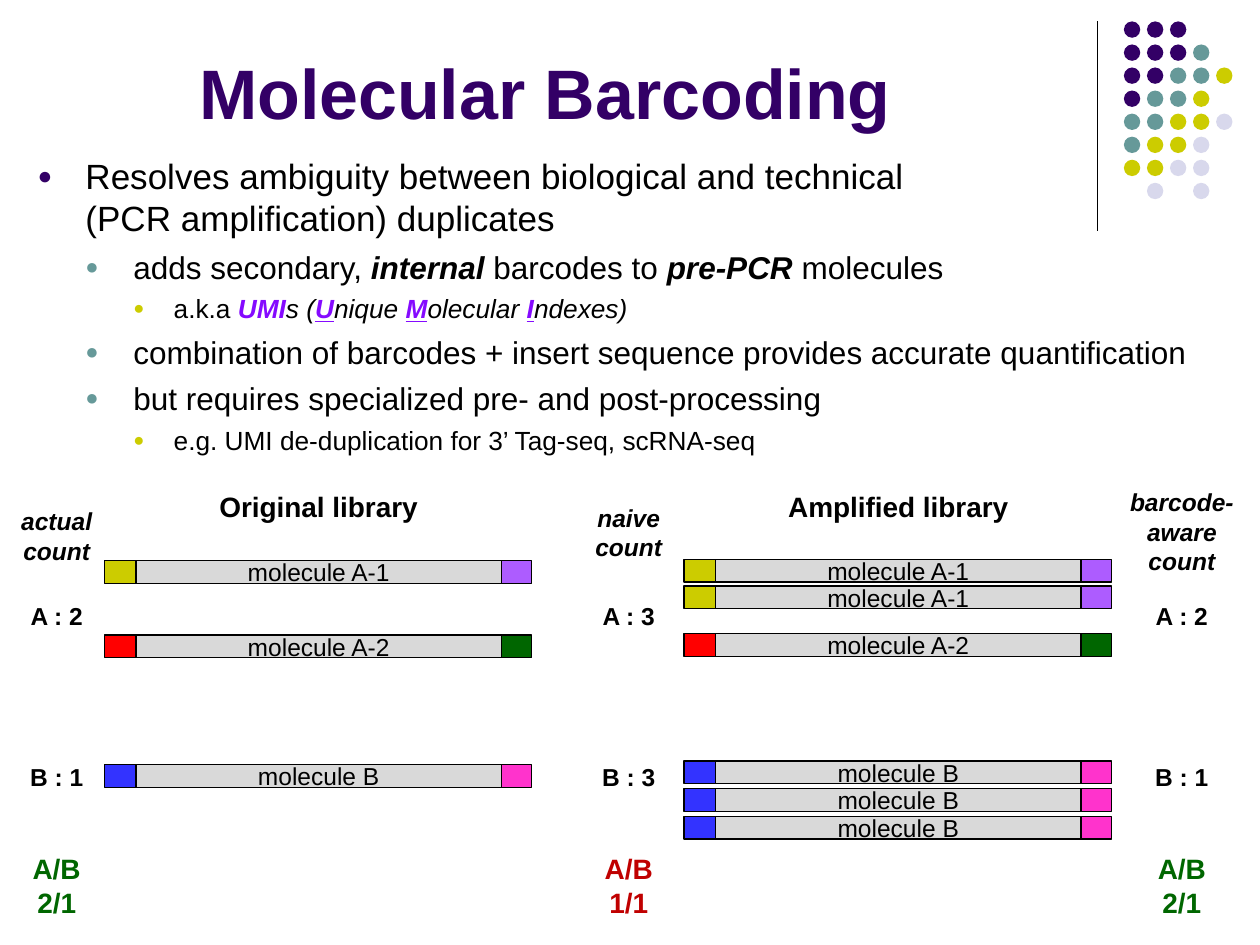
from lxml import etree
from pptx import Presentation
from pptx.dml.color import RGBColor
from pptx.enum.shapes import MSO_CONNECTOR, MSO_SHAPE
from pptx.enum.text import MSO_ANCHOR, PP_ALIGN
from pptx.oxml.ns import qn
from pptx.util import Inches, Pt

RECT, OVAL = MSO_SHAPE.RECTANGLE, MSO_SHAPE.OVAL
STRAIGHT = MSO_CONNECTOR.STRAIGHT
CENTER = PP_ALIGN.CENTER
TOP, MIDDLE, BOTTOM = MSO_ANCHOR.TOP, MSO_ANCHOR.MIDDLE, MSO_ANCHOR.BOTTOM

FONT = "Arial"
BLACK, GREY, PURPLE = "000000", "D9D9D9", "330066"
TEAL, OLIVE, LILAC = "669999", "CCCC00", "D8D8EC"
VIOLET, GREEN, RED = "850AFF", "006600", "C00000"

DOT_COLORS = {"P": PURPLE, "T": TEAL, "O": OLIVE, "L": LILAC}
DOT_ROWS = ["PPP", "PPPT", "PPTTO", "PTTO", "TTOOL", "TOOL", "OOLL", " L L"]

# Left indent, hanging indent, size, space before, bullet colour
LEVELS = [(0.38, 0.38, 20, 5, PURPLE),
          (0.76, 0.38, 18, 5, TEAL),
          (1.08, 0.32, 15, 4, OLIVE)]

# Level, then runs of (text, style): b bold, i italic, u underlined, v violet
BULLETS = [
    (0, [("Resolves ambiguity between biological and technical\n"
          "(PCR amplification) duplicates", "")]),
    (1, [("adds secondary, ", ""), ("internal", "bi"), (" barcodes to ", ""),
         ("pre-PCR", "bi"), (" molecules", "")]),
    (2, [("a.k.a ", ""), ("UMI", "biv"), ("s (", "i"), ("U", "biuv"),
         ("nique ", "i"), ("M", "biuv"), ("olecular ", "i"), ("I", "biuv"),
         ("ndexes)", "i")]),
    (1, [("combination of barcodes + insert sequence provides accurate "
          "quantification", "")]),
    (1, [("but requires specialized pre- and post-processing", "")]),
    (2, [("e.g. UMI de-duplication for 3’ Tag-seq, scRNA-seq", "")]),
]

# Left and right barcode colours
BARCODES = {"molecule A-1": (OLIVE, "AD5CFF"),
            "molecule A-2": ("FF0000", GREEN),
            "molecule B": ("3333FF", "FF33CC")}

# Title, left edge, (molecule, top) pairs
LIBRARIES = [
    ("Original library", 0.83,
     [("molecule A-1", 4.45), ("molecule A-2", 5.04), ("molecule B", 6.07)]),
    ("Amplified library", 5.43,
     [("molecule A-1", 4.44), ("molecule A-1", 4.65), ("molecule A-2", 5.03),
      ("molecule B", 6.04), ("molecule B", 6.26), ("molecule B", 6.48)]),
]

# Centre, heading, heading top and width, counts, ratio, ratio colour
COUNTS = [
    (0.45, "actual\ncount", 3.97, 1.39, "A : 2", "B : 1", "A/B\n2/1", GREEN),
    (4.99, "naive\ncount", 3.94, 0.81, "A : 3", "B : 3", "A/B\n1/1", RED),
    (9.38, "barcode-\naware\ncount", 3.82, 1.39, "A : 2", "B : 1", "A/B\n2/1", GREEN),
]


def rgb(color):
    return RGBColor.from_string(color)


def style_run(r, size, color=BLACK, bold=False, italic=False, underline=False):
    f = r.font
    f.name, f.size, f.bold, f.italic = FONT, Pt(size), bold, italic
    f.underline = underline
    f.color.rgb = rgb(color)


def add_text_frame(s, x, y, w, h, anchor=TOP):
    tf = s.shapes.add_textbox(Inches(x), Inches(y), Inches(w), Inches(h)).text_frame
    tf.word_wrap = True
    tf.vertical_anchor = anchor
    return tf


def add_label(s, text, x, y, w, h, size, color=BLACK, italic=False, anchor=TOP):
    """Add bold centred text, with line breaks at each newline."""
    tf = add_text_frame(s, x, y, w, h, anchor)
    p = tf.paragraphs[0]
    p.text = text.replace("\n", "\v")
    p.alignment = CENTER
    for r in p.runs:
        style_run(r, size, color, bold=True, italic=italic)


def add_filled(s, kind, x, y, w, h, fill, line=None):
    sp = s.shapes.add_shape(kind, Inches(x), Inches(y), Inches(w), Inches(h))
    sp.shadow.inherit = False
    sp.fill.solid()
    sp.fill.fore_color.rgb = rgb(fill)
    if line:
        sp.line.color.rgb = rgb(line)
        sp.line.width = Pt(0.75)
    else:
        sp.line.fill.background()
    return sp


def add_corner_decoration(s):
    cx = s.shapes.add_connector(STRAIGHT, Inches(8.71), Inches(0.17),
                                Inches(8.71), Inches(1.83))
    cx.line.color.rgb = rgb(BLACK)
    cx.line.width = Pt(0.75)
    etree.SubElement(cx._element.spPr, qn("a:effectLst"))
    pitch = 0.183
    for row, codes in enumerate(DOT_ROWS):
        for col, code in enumerate(codes):
            if code in DOT_COLORS:
                add_filled(s, OVAL, 8.92 + col * pitch, 0.17 + row * pitch,
                           0.13, 0.13, DOT_COLORS[code])


def set_bullet(p, left, hanging, color):
    pPr = p._p.get_or_add_pPr()
    pPr.set("marL", str(Inches(left)))
    pPr.set("indent", str(-Inches(hanging)))
    clr = etree.SubElement(pPr, qn("a:buClr"))
    etree.SubElement(clr, qn("a:srgbClr"), val=color)
    etree.SubElement(pPr, qn("a:buSzPct"), val="70000")
    etree.SubElement(pPr, qn("a:buFont"), typeface=FONT)
    etree.SubElement(pPr, qn("a:buChar"), char="●")


def add_bullets(s):
    tf = add_text_frame(s, 0.2, 1.18, 9.59, 2.65)
    for i, (level, runs) in enumerate(BULLETS):
        left, hanging, size, before, color = LEVELS[level]
        p = tf.add_paragraph() if i else tf.paragraphs[0]
        p.level = level
        p.space_before = Pt(before)
        set_bullet(p, left, hanging, color)
        for text, style in runs:
            for n, part in enumerate(text.split("\n")):
                if n:
                    p.add_line_break()
                r = p.add_run()
                r.text = part
                style_run(r, size, VIOLET if "v" in style else BLACK,
                          "b" in style, "i" in style, "u" in style)


def add_molecule(s, name, x, y):
    """Add an insert bar that overlaps a barcode at each end."""
    height = 0.18
    for dx, color in zip((0, 3.02), BARCODES[name]):
        add_filled(s, RECT, x + dx, y, 0.37, height, color, BLACK)
    tf = add_filled(s, RECT, x + 0.25, y, 2.9, height, GREY, BLACK).text_frame
    tf.margin_top = tf.margin_bottom = 0
    tf.vertical_anchor = MIDDLE
    tf.text = name
    p = tf.paragraphs[0]
    p.alignment = CENTER
    style_run(p.runs[0], 14)


def add_count_column(s, center, heading, top, width, a, b, ratio, color):
    add_label(s, heading, center - width / 2, top, width, 0.57, 14, italic=True)
    x, w = center - 0.4, 0.8
    add_label(s, a, x, 4.72, w, 0.34, 14)
    add_label(s, b, x, 6, w, 0.34, 14)
    add_label(s, ratio, x, 6.71, w, 0.64, 16, color)


def main():
    prs = Presentation()
    prs.slide_width, prs.slide_height = Inches(10), Inches(7.5)
    s = prs.slides.add_slide(prs.slide_layouts[6])
    add_corner_decoration(s)
    add_bullets(s)
    add_label(s, "Molecular Barcoding", 0.2, 0.26, 8.25, 0.85, 40, PURPLE,
              anchor=BOTTOM)
    for title, x, molecules in LIBRARIES:
        add_label(s, title, x + 0.05, 3.84, 3.3, 0.37, 16)
        for name, y in molecules:
            add_molecule(s, name, x, y)
    for column in COUNTS:
        add_count_column(s, *column)
    prs.save("out.pptx")


if __name__ == "__main__":
    main()
